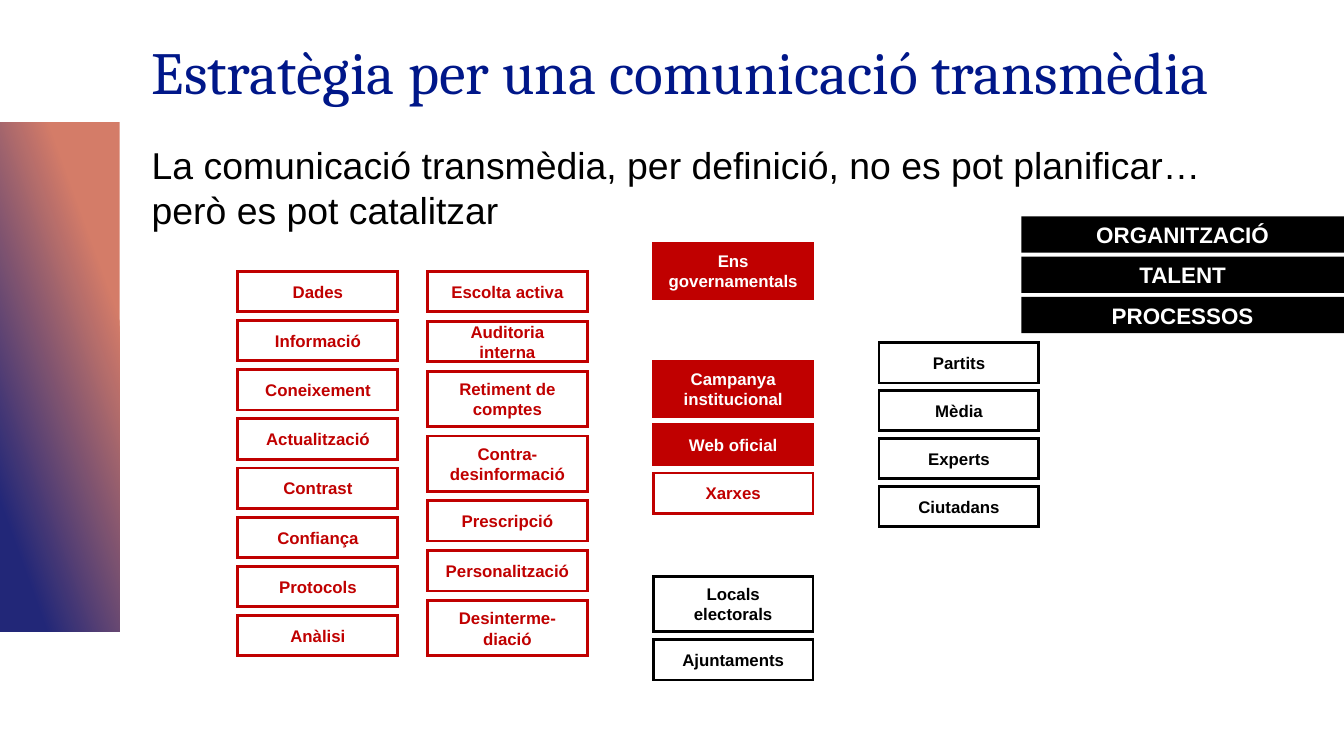
from lxml import etree
from pptx import Presentation
from pptx.dml.color import RGBColor
from pptx.enum import shapes, text
from pptx.oxml.ns import qn
from pptx.util import Inches, Pt

NAVY = RGBColor(0x00, 0x17, 0x89)
RED = RGBColor(0xC0, 0x00, 0x00)
BLACK = RGBColor(0x00, 0x00, 0x00)
WHITE = RGBColor(0xFF, 0xFF, 0xFF)
SALMON = RGBColor(0xD4, 0x7C, 0x68)
INDIGO = RGBColor(0x22, 0x27, 0x78)

LOW, TALL = 0.3, 0.41


def add_run(p, words, size, color, font="Arial", bold=False):
    r = p.add_run()
    r.text = words
    r.font.name = font
    r.font.size = Pt(size)
    r.font.bold = bold
    r.font.color.rgb = color


def add_rect(s, x, y, w, h):
    sp = s.shapes.add_shape(shapes.MSO_SHAPE.RECTANGLE,
                            Inches(x), Inches(y), Inches(w), Inches(h))
    sp.shadow.inherit = False
    return sp


def add_label(s, x, y, w, h, words, size, color, fill=None, line=None):
    sp = add_rect(s, x, y, w, h)
    if fill is None:
        sp.fill.background()
    else:
        sp.fill.solid()
        sp.fill.fore_color.rgb = fill
    if line is None:
        sp.line.fill.background()
    else:
        sp.line.color.rgb = line
        sp.line.width = Pt(1.5)
        ln = sp.element.spPr.find(qn("a:ln"))
        etree.SubElement(ln, qn("a:miter"), lim="800000")
    tf = sp.text_frame
    tf.word_wrap = True
    tf.vertical_anchor = text.MSO_ANCHOR.MIDDLE
    p = tf.paragraphs[0]
    p.alignment = text.PP_ALIGN.CENTER
    add_run(p, words, size, color, bold=True)


def add_side_band(s, x, y, w, h):
    sp = add_rect(s, x, y, w, h)
    sp.line.fill.background()
    sp.fill.gradient()
    sp.fill.gradient_angle = 200
    stops = sp.fill.gradient_stops
    for stop, position, color in zip(stops, (0.23, 0.85), (SALMON, INDIGO)):
        stop.position = position
        stop.color.rgb = color


def add_title(s, x, y, w, h, words):
    title = s.shapes.title
    title.left, title.top = Inches(x), Inches(y)
    title.width, title.height = Inches(w), Inches(h)
    tf = title.text_frame
    tf.word_wrap = True
    tf.auto_size = text.MSO_AUTO_SIZE.NONE
    tf.vertical_anchor = text.MSO_ANCHOR.BOTTOM
    p = tf.paragraphs[0]
    p.alignment = text.PP_ALIGN.LEFT
    p.line_spacing = 0.9
    add_run(p, words, 32, NAVY, font="Cambria")


def add_statement(s, x, y, w, h, words):
    sp = s.shapes.add_textbox(Inches(x), Inches(y), Inches(w), Inches(h))
    sp.fill.solid()
    sp.fill.fore_color.rgb = WHITE
    tf = sp.text_frame
    tf.word_wrap = True
    add_run(tf.paragraphs[0], words, 20, BLACK)


def add_stack(s, x, y, w, h, items, color, filled=()):
    used = sum(height for _, height in items)
    gap = (h - used) / max(len(items) - 1, 1)
    for words, height in items:
        solid = words in filled
        add_label(s, x, y, w, height, words, 9, WHITE if solid else color,
                  fill=color if solid else None, line=color)
        y += height + gap


def add_pillars(s, x, y, w, h, names):
    pitch = 0.3
    for i, name in enumerate(names):
        add_label(s, x, y + i * pitch, w, h, name, 12, WHITE, fill=BLACK)


def main():
    prs = Presentation()
    prs.slide_width = Inches(10)
    prs.slide_height = Inches(10 * 9 / 16)
    s = prs.slides.add_slide(prs.slide_layouts[5])

    add_side_band(s, 0, 0.91, 0.89, 3.79)
    add_title(s, 1.03, 0.26, 8.84, 0.59,
              "Estratègia per una comunicació transmèdia")
    add_statement(s, 1.03, 1.01, 8.32, 3.86,
                  "La comunicació transmèdia, per definició, no es pot "
                  "planificar… però es pot catalitzar")

    resources = ["Dades", "Informació", "Coneixement", "Actualització",
                 "Contrast", "Confiança", "Protocols", "Anàlisi"]
    actions = [("Escolta activa", LOW), ("Auditoria interna", LOW),
               ("Retiment de comptes", TALL), ("Contra-desinformació", TALL),
               ("Prescripció", LOW), ("Personalització", LOW),
               ("Desinterme-diació", TALL)]
    government = [("Ens governamentals", TALL)]
    channels = [("Campanya institucional", TALL), ("Web oficial", LOW),
                ("Xarxes", LOW)]
    places = [("Locals electorals", TALL), ("Ajuntaments", LOW)]
    actors = ["Partits", "Mèdia", "Experts", "Ciutadans"]

    w = 1.19
    add_stack(s, 1.77, 2.02, w, 2.86, [(n, LOW) for n in resources], RED)
    add_stack(s, 3.18, 2.02, w, 2.86, actions, RED)
    add_stack(s, 4.86, 1.81, w, TALL, government, RED,
              filled=("Ens governamentals",))
    add_stack(s, 4.86, 2.69, w, 1.13, channels, RED,
              filled=("Campanya institucional", "Web oficial"))
    add_stack(s, 4.86, 4.29, w, 0.77, places, BLACK)
    add_stack(s, 6.54, 2.55, w, 1.37, [(n, LOW) for n in actors], BLACK)
    add_pillars(s, 7.6, 1.61, 2.4, 0.27,
                ["ORGANITZACIÓ", "TALENT", "PROCESSOS"])

    prs.save("out.pptx")


if __name__ == "__main__":
    main()
